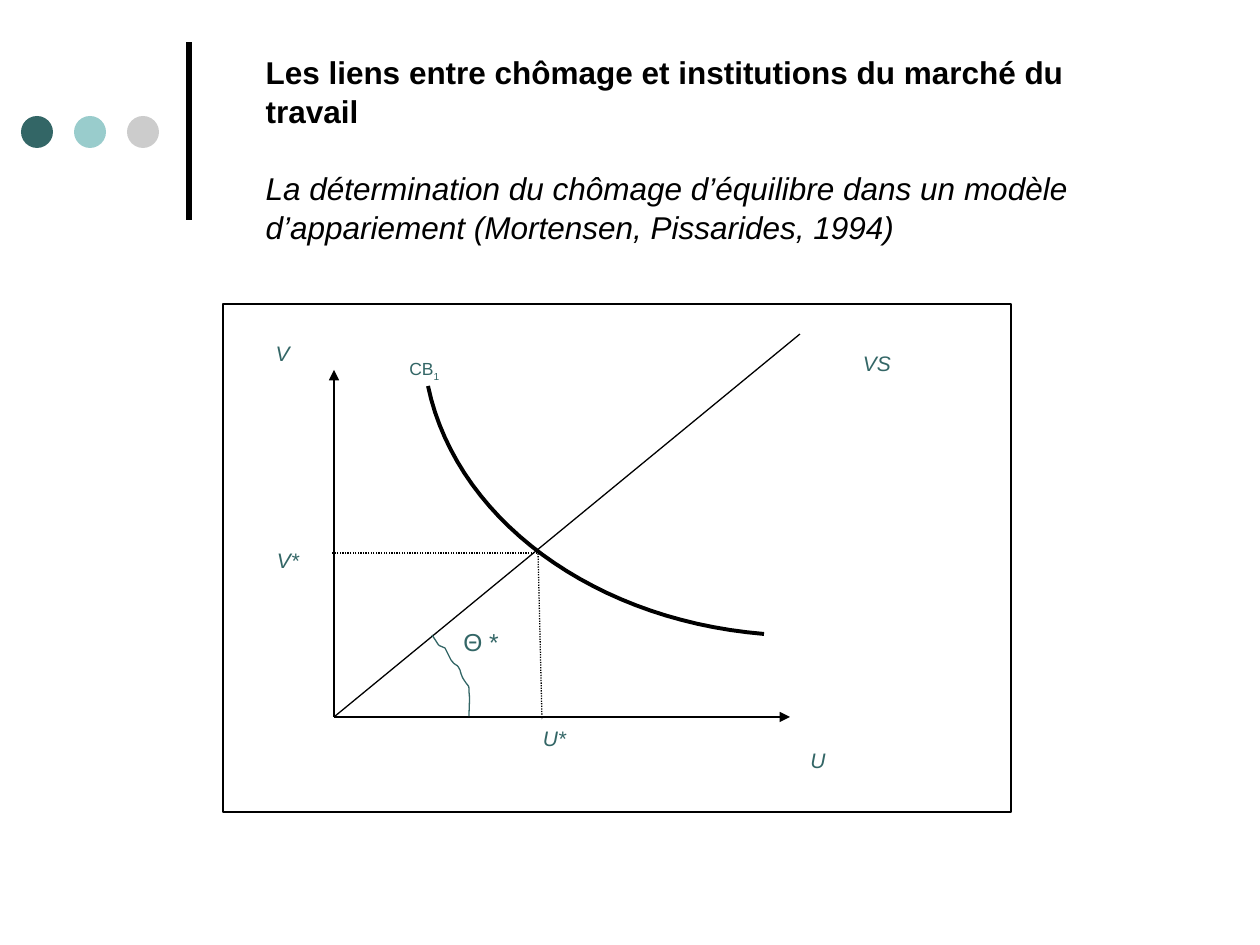
import pptx
import pptx.util
import pptx.dml.color
import pptx.enum.dml
import pptx.enum.shapes
import pptx.enum.text
import pptx.oxml
import pptx.oxml.ns

RGB = pptx.dml.color.RGBColor
SHAPE = pptx.enum.shapes.MSO_SHAPE
ALIGN = pptx.enum.text.PP_ALIGN
BLACK = RGB(0x00, 0x00, 0x00)
WHITE = RGB(0xFF, 0xFF, 0xFF)
TEAL = RGB(0x33, 0x66, 0x66)
AQUA = RGB(0x99, 0xCC, 0xCC)
GREY = RGB(0xCC, 0xCC, 0xCC)
FONT = "Arial"
SCALE = 914400 / 126

TITLE_BOX = (253, 45, 863, 204)
TITLE = [
    ("Les liens entre chômage et institutions du marché du travail", True, False),
    ("La détermination du chômage d’équilibre dans un modèle "
     "d’appariement (Mortensen, Pissarides, 1994)", False, True),
]
DOTS = [TEAL, AQUA, GREY]
DOT_LEFT, DOT_TOP, DOT_SIZE, DOT_STEP = 21, 116, 32, 53
FRAME = (223, 304, 788, 508)
ORIGIN = (334, 717)

LINES = [
    ((189, 220), (189, 42), 3, None),
    (ORIGIN, (334, 370), 0.75, "arrow"),
    (ORIGIN, (790, 717), 0.75, "arrow"),
    (ORIGIN, (800, 334), 0.75, None),
    ((538, 551), (542, 719), 0.75, "dots"),
    ((537, 553), (331, 553), 0.75, "dots"),
]
CURVES = [
    ([(764, 634), (593, 620), (456, 519), (428, 386)], BLACK, 2.25),
    ([(432, 635), (441, 648), (436, 644), (445, 648),
      (445, 648), (451, 660), (451, 660),
      (457, 668), (456, 662), (460, 670),
      (461, 674), (462, 677), (464, 680),
      (469, 688), (469, 684), (469, 692),
      (470, 699), (469, 708), (469, 716)], TEAL, 0.75),
]
LABELS = [
    ("V", "", (253, 334, 59, 147), 12, True),
    ("U", "", (730, 741, 176, 63), 12, True),
    ("CB", "1", (397, 352, 126, 32), 10, False),
    ("U*", "", (490, 719, 129, 79), 12, True),
    ("V*", "", (258, 541, 60, 79), 12, True),
    ("VS", "", (789, 344, 176, 63), 12, True),
]
THETA = ("Θ *", (451, 621, 62, 43), 14)


def px(*values):
    return [pptx.util.Emu(round(v * SCALE)) for v in values]


def add_run(p, text, size, color, bold=False, italic=False):
    r = p.add_run()
    r.text = text
    f = r.font
    f.name, f.size, f.bold, f.italic = FONT, pptx.util.Pt(size), bold, italic
    f.color.rgb = color
    return r


def add_shape(s, kind, box, fill=None, line=None):
    sp = s.shapes.add_shape(kind, *px(*box))
    sp.shadow.inherit = False
    if fill is None:
        sp.fill.background()
    else:
        sp.fill.solid()
        sp.fill.fore_color.rgb = fill
    if line is None:
        sp.line.fill.background()
    else:
        sp.line.color.rgb = line
        sp.line.width = pptx.util.Pt(1)
    return sp


def add_line(s, start, end, width, style):
    c = s.shapes.add_connector(
        pptx.enum.shapes.MSO_CONNECTOR.STRAIGHT, *px(*start, *end))
    c.line.color.rgb = BLACK
    c.line.width = pptx.util.Pt(width)
    if style == "dots":
        c.line.dash_style = pptx.enum.dml.MSO_LINE.ROUND_DOT
    if style == "arrow":
        tail = pptx.oxml.parse_xml(
            f'<a:tailEnd {pptx.oxml.ns.nsdecls("a")} type="triangle"/>')
        c.line._get_or_add_ln().append(tail)
    c._element.spPr.append(
        pptx.oxml.parse_xml(f'<a:effectLst {pptx.oxml.ns.nsdecls("a")}/>'))


def bezier(points, steps):
    result = [points[0]]
    for i in range(0, len(points) - 1, 3):
        a, b, c, d = points[i:i + 4]
        for k in range(1, steps + 1):
            t = k / steps
            u = 1 - t
            result.append(tuple(
                u**3 * a[n] + 3 * u * u * t * b[n] + 3 * u * t * t * c[n] + t**3 * d[n]
                for n in (0, 1)))
    return result


def add_curve(s, points, color, width):
    path = [px(*point) for point in bezier(points, 30 if len(points) == 4 else 6)]
    builder = s.shapes.build_freeform(*path[0])
    builder.add_line_segments(path[1:], close=False)
    sp = builder.convert_to_shape()
    sp.shadow.inherit = False
    sp.fill.background()
    sp.line.color.rgb = color
    sp.line.width = pptx.util.Pt(width)


def add_label(s, text, sub, box, size, italic):
    sp = add_shape(s, SHAPE.RECTANGLE, box, WHITE)
    tf = sp.text_frame
    tf.vertical_anchor = pptx.enum.text.MSO_ANCHOR.TOP
    p = tf.paragraphs[0]
    p.alignment = ALIGN.LEFT if sub else ALIGN.CENTER
    add_run(p, text, size, TEAL, italic=italic)
    if sub:
        r = add_run(p, sub, size, TEAL, italic=italic)
        r._r.get_or_add_rPr().set("baseline", "-30000")


def add_title(s):
    sp = s.shapes.title
    sp.left, sp.top, sp.width, sp.height = px(*TITLE_BOX)
    tf = sp.text_frame
    tf.word_wrap = True
    tf.auto_size = pptx.enum.text.MSO_AUTO_SIZE.NONE
    tf.vertical_anchor = pptx.enum.text.MSO_ANCHOR.TOP
    for i, (text, bold, italic) in enumerate(TITLE):
        p = tf.add_paragraph() if i else tf.paragraphs[0]
        p.alignment = ALIGN.LEFT
        p.line_spacing = 1.04
        p.space_before = pptx.util.Pt(21.5 if i else 0)
        add_run(p, text, 18, BLACK, bold, italic)


def main():
    prs = pptx.Presentation()
    prs.slide_width, prs.slide_height = px(1260, 945)
    s = prs.slides.add_slide(prs.slide_layouts[5])
    add_title(s)
    for i, color in enumerate(DOTS):
        box = (DOT_LEFT + i * DOT_STEP, DOT_TOP, DOT_SIZE, DOT_SIZE)
        add_shape(s, SHAPE.OVAL, box, color)
    add_shape(s, SHAPE.RECTANGLE, FRAME, line=BLACK)
    for label in LABELS:
        add_label(s, *label)
    for line in LINES:
        add_line(s, *line)
    for curve in CURVES:
        add_curve(s, *curve)
    text, box, size = THETA
    tf = s.shapes.add_textbox(*px(*box)).text_frame
    tf.word_wrap = False
    add_run(tf.paragraphs[0], text, size, TEAL)
    prs.save("out.pptx")


if __name__ == "__main__":
    main()
